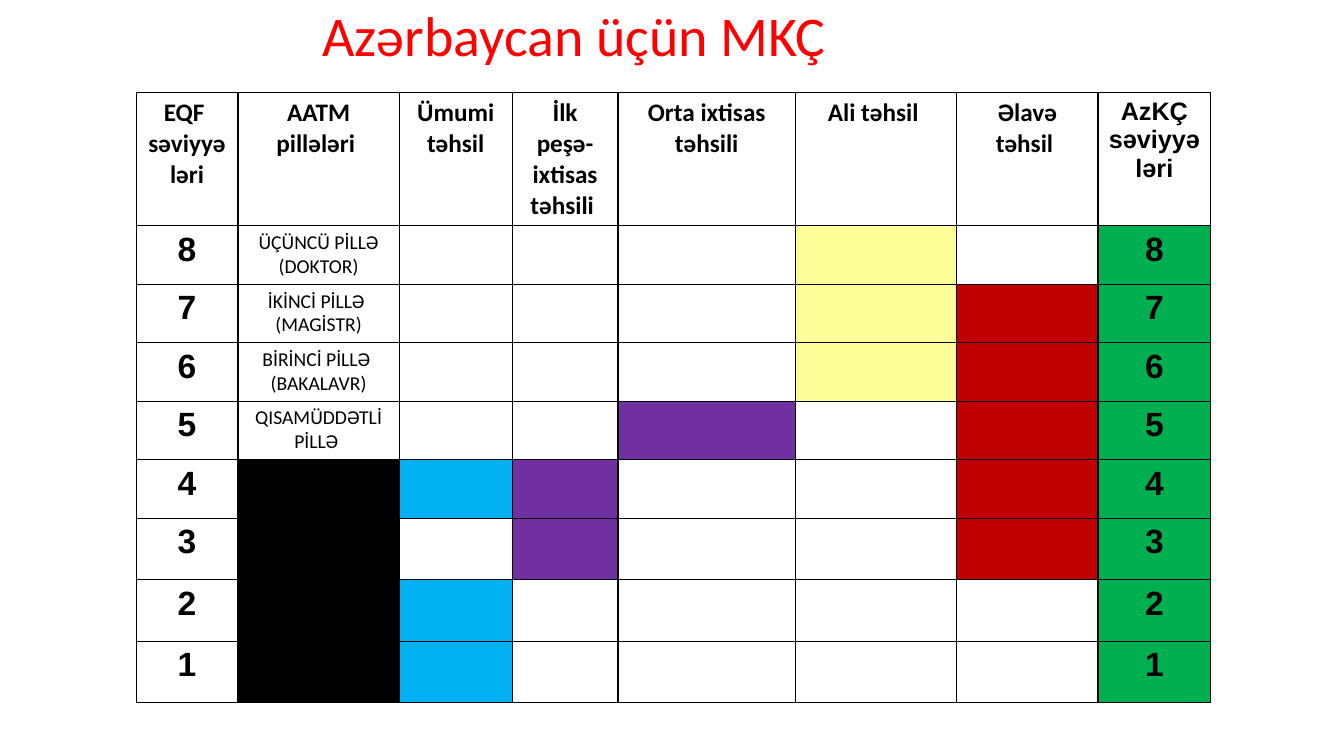
from lxml.etree import SubElement
from pptx import Presentation
from pptx.dml.color import RGBColor
from pptx.enum.shapes import MSO_SHAPE
from pptx.enum.text import MSO_AUTO_SIZE, PP_ALIGN
from pptx.oxml.ns import qn
from pptx.util import Inches, Pt

COLORS = {
    "white": "FFFFFF",
    "black": "000000",
    "title": "FF0000",
    "general": "00B0F0",
    "vocational": "7030A0",
    "higher": "FFFF99",
    "additional": "C00000",
    "level": "00B050",
}
FORMATS = {
    "title": {"size": Pt(40), "name": "Calibri", "bold": False},
    "header": {"size": Pt(18), "name": "Calibri", "bold": True},
    "level_header": {"size": Pt(18), "name": "Arial", "bold": True},
    "level": {"size": Pt(24), "name": "Arial", "bold": True},
    "stage": {"size": Pt(14), "name": "Calibri", "bold": False},
}
HEADERS = [
    "EQF \nsəviyyələri", "AATM\npillələri ", "Ümumi təhsil", "İlk peşə-ixtisas təhsili ",
    "Orta ixtisas təhsili", "Ali təhsil ", "Əlavə təhsil ", "AzKÇ səviyyələri",
]
STAGES = {
    8: "ÜÇÜNCÜ PİLLƏ (DOKTOR)",
    7: "İKİNCİ PİLLƏ \n(MAGİSTR)",
    6: "BİRİNCİ PİLLƏ \n(BAKALAVR)",
    5: "QISAMÜDDƏTLİ PİLLƏ ",
}
# Column index: (colour, qualification levels it covers)
COVERAGE = {
    1: ("black", {1, 2, 3, 4}),
    2: ("general", {1, 2, 4}),
    3: ("vocational", {3, 4}),
    4: ("vocational", {5}),
    5: ("higher", {6, 7, 8}),
    6: ("additional", {3, 4, 5, 6, 7}),
    7: ("level", set(range(1, 9))),
}
COLUMN_WIDTHS = [1.01, 1.6, 1.12, 1.05, 1.76, 1.6, 1.4, 1.12]
ROW_HEIGHTS = [1.32] + [0.58] * 5 + [0.61] * 3


def write_text(frame, text, style, color="black", align=PP_ALIGN.CENTER):
    frame.text = text
    for paragraph in frame.paragraphs:
        paragraph.alignment = align
        for run in paragraph.runs:
            run.font.color.rgb = RGBColor.from_string(COLORS[color])
            for attribute, value in FORMATS[style].items():
                setattr(run.font, attribute, value)


def style_cell(cell, color):
    """Give the cell a one-point black border and a solid fill."""
    properties = cell._tc.get_or_add_tcPr()
    for side in ("a:lnL", "a:lnR", "a:lnT", "a:lnB"):
        line = SubElement(properties, qn(side), w=str(Pt(1)))
        fill = SubElement(line, qn("a:solidFill"))
        SubElement(fill, qn("a:srgbClr"), val=COLORS["black"])
    cell.fill.solid()
    cell.fill.fore_color.rgb = RGBColor.from_string(COLORS[color])


presentation = Presentation()
presentation.slide_width = Inches(13.33)
presentation.slide_height = Inches(7.5)
slide = presentation.slides.add_slide(presentation.slide_layouts[6])

# White panel behind the table
panel = slide.shapes.add_shape(
    MSO_SHAPE.RECTANGLE, Inches(1.67), Inches(0.79), Inches(10), Inches(6.71))
panel.shadow.inherit = False
panel.fill.solid()
panel.fill.fore_color.rgb = RGBColor.from_string(COLORS["white"])
panel.line.color.rgb = RGBColor.from_string(COLORS["white"])
panel.line.width = Pt(1)

# Qualifications table
table = slide.shapes.add_table(
    len(ROW_HEIGHTS), len(COLUMN_WIDTHS), Inches(1.35), Inches(0.92),
    Inches(sum(COLUMN_WIDTHS)), Inches(sum(ROW_HEIGHTS))).table
table.horz_banding = False
for column, width in zip(table.columns, COLUMN_WIDTHS):
    column.width = Inches(width)
for row, height in zip(table.rows, ROW_HEIGHTS):
    row.height = Inches(height)

last_column = len(HEADERS) - 1
for column, header in enumerate(HEADERS):
    cell = table.cell(0, column)
    style_cell(cell, "white")
    write_text(cell.text_frame, header, "level_header" if column == last_column else "header")

for row, level in enumerate(range(8, 0, -1), start=1):
    for column in range(len(HEADERS)):
        color, levels = COVERAGE.get(column, ("white", set()))
        style_cell(table.cell(row, column), color if level in levels else "white")
    for column in (0, last_column):
        write_text(table.cell(row, column).text_frame, str(level), "level")
    if level in STAGES:
        write_text(table.cell(row, 1).text_frame, STAGES[level], "stage")

# Title
title = slide.shapes.add_textbox(Inches(3.1), Inches(-0.04), Inches(6.12), Inches(0.77))
title.text_frame.word_wrap = True
title.text_frame.auto_size = MSO_AUTO_SIZE.SHAPE_TO_FIT_TEXT
write_text(title.text_frame, "Azərbaycan üçün MKÇ", "title", "title", PP_ALIGN.LEFT)

presentation.save("out.pptx")
